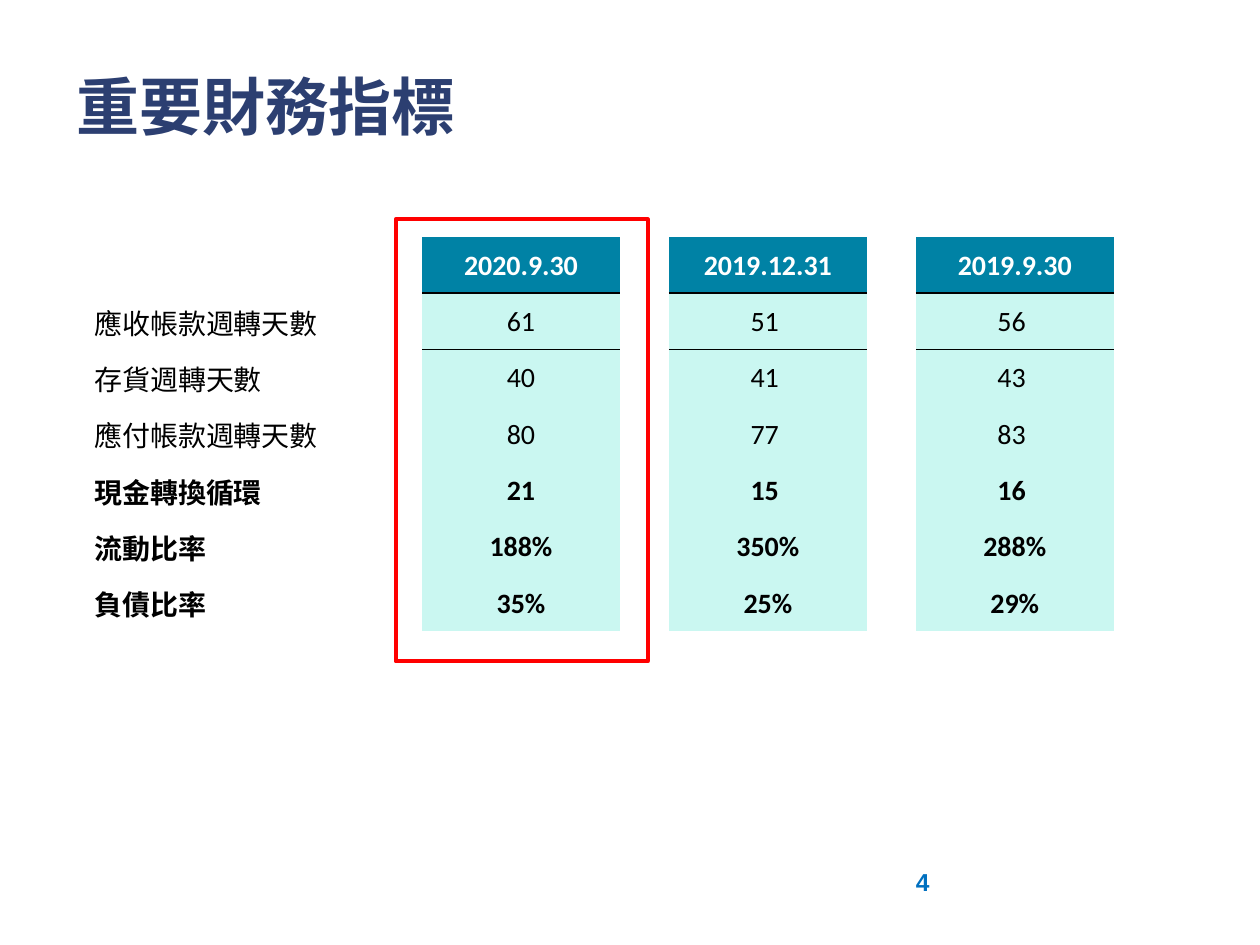
from lxml import etree
from pptx import Presentation
from pptx.dml.color import RGBColor
from pptx.enum.shapes import MSO_SHAPE
from pptx.enum.text import MSO_ANCHOR, PP_ALIGN
from pptx.oxml import parse_xml
from pptx.oxml.ns import nsdecls, qn
from pptx.util import Inches, Pt

NAVY = RGBColor(0x2C, 0x3F, 0x71)
BLUE = RGBColor(0x00, 0x70, 0xC0)
TEAL = RGBColor(0x00, 0x82, 0xA5)
MINT = RGBColor(0xCA, 0xF7, 0xF1)
RED = RGBColor(0xFF, 0x00, 0x00)
BLACK = RGBColor(0x00, 0x00, 0x00)
WHITE = RGBColor(0xFF, 0xFF, 0xFF)
PLAIN = "{2D5ABB26-0587-4C30-8999-92F81FD0307C}"  # no style, no grid

ROWS = [
    ("", "2020.9.30", "2019.12.31", "2019.9.30"),
    ("應收帳款週轉天數", "61", "51 ", "56 "),
    ("存貨週轉天數", "40", "41 ", "43 "),
    ("應付帳款週轉天數", "80", "77 ", "83 "),
    ("現金轉換循環", "21", "15 ", "16 "),
    ("流動比率", "188%", "350%", "288%"),
    ("負債比率", "35%", "25%", "29%"),
]
WIDTHS = [2.36, 0.25, 1.57, 0.39, 1.57, 0.39, 1.57]


def style(par, face, size, color, bold):
    for run in par.runs:
        run.font.name = face
        run.font.size = Pt(size)
        run.font.color.rgb = color
        run.font.bold = bold


def rule(cell, side):
    line = parse_xml(f'<a:{side} {nsdecls("a")} w="12700"/>')
    fill = etree.SubElement(line, qn("a:solidFill"))
    etree.SubElement(fill, qn("a:srgbClr")).set("val", str(BLACK))
    cell._tc.get_or_add_tcPr().insert(0, line)


prs = Presentation()
prs.slide_width, prs.slide_height = Inches(10), Inches(7.5)
slide = prs.slides.add_slide(prs.slide_layouts[6])

# Page number and title
for text, box, size, color, anchor in [
    ("4", (7.17, 6.83, 2.33, 0.52), 14, BLUE, MSO_ANCHOR.TOP),
    ("重要財務指標", (0.51, 0.21, 8.58, 1.25), 36, NAVY, MSO_ANCHOR.MIDDLE),
]:
    frame = slide.shapes.add_textbox(*map(Inches, box)).text_frame
    frame.word_wrap = True
    frame.vertical_anchor = anchor
    frame.text = text
    style(frame.paragraphs[0], "Arial", size, color, True)

# Table: labels and dates in every second column, gaps between
table = slide.shapes.add_table(
    len(ROWS), len(WIDTHS), Inches(0.74), Inches(1.88),
    Inches(sum(WIDTHS)), Inches(3.13)).table
table.first_row = table.horz_banding = False
table._tbl.tblPr.find(qn("a:tableStyleId")).text = PLAIN
for col, width in zip(table.columns, WIDTHS):
    col.width = Inches(width)

for r, row in enumerate(ROWS):
    table.rows[r].height = Inches(3.13 / len(ROWS))
    for c in range(len(WIDTHS)):
        cell = table.cell(r, c)
        cell.margin_left = cell.margin_right = cell.margin_top = Inches(0.01)
        cell.margin_bottom = 0
        cell.vertical_anchor = MSO_ANCHOR.MIDDLE
        cell.fill.background()
        if c % 2:
            continue
        cell.text = row[c // 2]
        par = cell.text_frame.paragraphs[0]
        style(par, "Calibri", 16, BLACK if r else WHITE, r == 0 or r > 3)
        if c:
            par.alignment = PP_ALIGN.CENTER
            cell.fill.solid()
            cell.fill.fore_color.rgb = MINT if r else TEAL
            if r < 2:
                rule(cell, "lnT" if r else "lnB")

# Frame around the latest period
mark = slide.shapes.add_shape(
    MSO_SHAPE.RECTANGLE, Inches(3.14), Inches(1.74), Inches(2), Inches(3.51))
mark.shadow.inherit = False
mark.fill.background()
mark.line.color.rgb = RED
mark.line.width = Pt(2.25)

prs.save("out.pptx")
